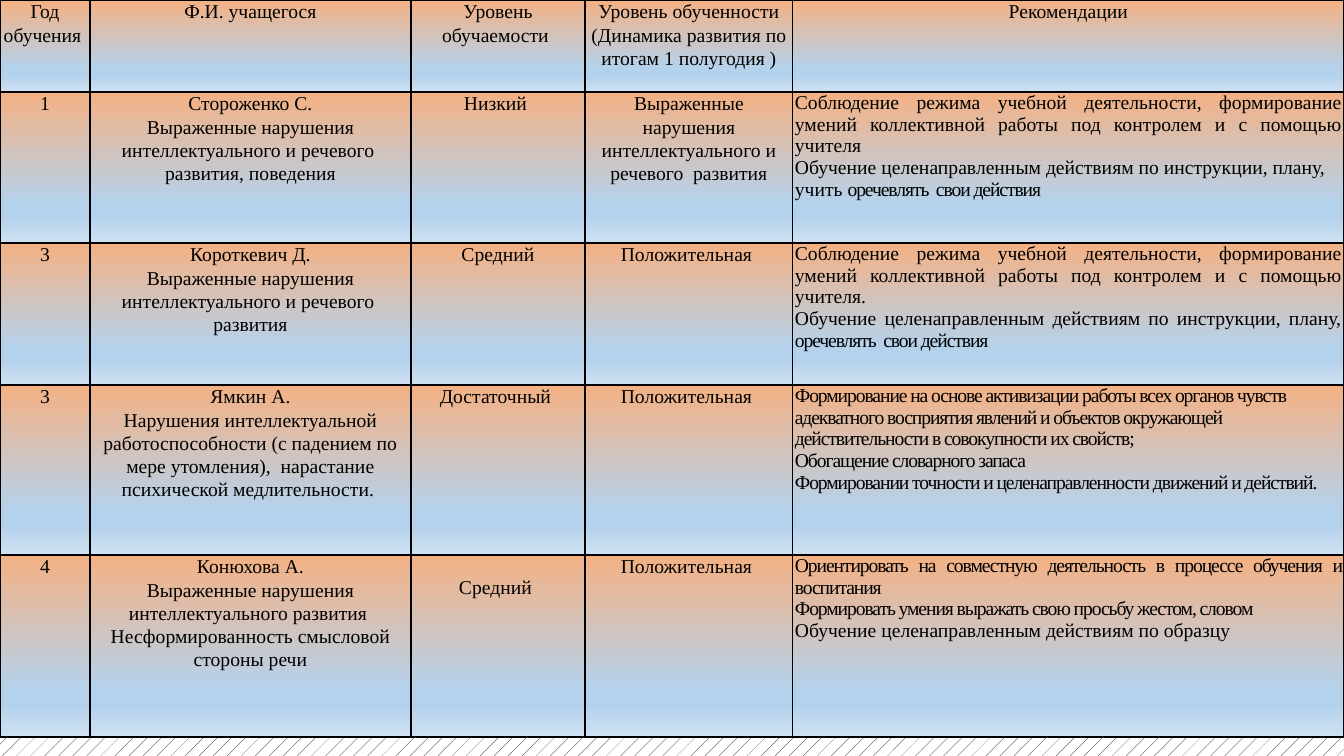
from lxml import etree
from pptx import Presentation
from pptx.dml.color import RGBColor
from pptx.enum.dml import MSO_PATTERN
from pptx.enum.text import PP_ALIGN
from pptx.oxml.ns import qn
from pptx.util import Pt

CENTER, JUSTIFY, LEFT = PP_ALIGN.CENTER, PP_ALIGN.JUSTIFY, PP_ALIGN.LEFT
SCALE = 914400 / 100.8
SLIDE_SIZE = (1344, 756)
COLUMN_WIDTHS = [90, 321, 174, 208, 551]
ROW_HEIGHTS = [92, 151, 142, 170, 182]
SIDE_MARGIN = 2
LOWERED_CELL, LOWERED_MARGIN = (4, 2), 21
FONT, FONT_SIZE, TEXT_COLOR = "Times New Roman", 14, "000000"
CENTERED_SPACING = 1.07
TIGHT, NORMAL = -80, 0
GRADIENT = [(0, "F4B183"), (74, "B5D2EC"), (83, "B5D2EC"), (100, "CEE1F2")]
BORDER_COLOR, BORDER_WIDTH = "000000", 1

HEADER = [
    ["Год обучения "],
    ["Ф.И. учащегося"],
    ["Уровень обучаемости "],
    ["Уровень обученности", "(Динамика развития по итогам 1 полугодия )"],
    ["Рекомендации"],
]
PUPILS = [
    [["1"],
     ["Стороженко С.", "Выраженные нарушения интеллектуального и речевого  развития, поведения"],
     ["Низкий "],
     ["Выраженные нарушения интеллектуального и речевого  развития"]],
    [["3"],
     ["Короткевич Д.", "Выраженные нарушения интеллектуального и речевого  развития"],
     ["Средний"],
     ["Положительная "]],
    [["3"],
     ["Ямкин А.",
      "Нарушения интеллектуальной работоспособности (с падением по мере утомления),  "
      "нарастание психической медлительности. "],
     ["Достаточный "],
     ["Положительная "]],
    [["4"],
     ["Конюхова А.", "Выраженные нарушения интеллектуального развития ",
      "Несформированность смысловой стороны речи"],
     ["Средний "],
     ["Положительная "]],
]
RECOMMENDATIONS = [
    [(JUSTIFY, [("Соблюдение режима учебной деятельности, формирование умений коллективной работы "
                 "под контролем и с помощью учителя", NORMAL)]),
     (LEFT, [("Обучение целенаправленным действиям по инструкции, плану, учить ", NORMAL),
             ("оречевлять  свои действия", TIGHT)])],
    [(JUSTIFY, [("Соблюдение режима учебной деятельности, формирование умений коллективной работы "
                 "под контролем и с помощью учителя.", NORMAL)]),
     (JUSTIFY, [("Обучение целенаправленным действиям по инструкции, плану, ", NORMAL),
                ("оречевлять  свои действия", TIGHT)])],
    [(LEFT, [("Формирование на основе активизации работы всех органов чувств адекватного восприятия "
              "явлений и объектов окружающей действительности в совокупности их свойств;", TIGHT)]),
     (LEFT, [("Обогащение словарного запаса", TIGHT)]),
     (LEFT, [("Формировании точности и целенаправленности движений и действий.", TIGHT)])],
    [(JUSTIFY, [("Ориентировать на совместную деятельность в процессе обучения и воспитания", TIGHT)]),
     (JUSTIFY, [("Формировать умения выражать свою просьбу жестом, словом", TIGHT)]),
     (LEFT, [("Обучение целенаправленным действиям по образцу", NORMAL)])],
]


def px(length):
    return round(length * SCALE)


def rgb(color):
    return RGBColor.from_string(color)


def add_color(parent, color):
    etree.SubElement(parent, qn("a:srgbClr"), val=color)


def write_paragraph(paragraph, runs, align=CENTER, spacing=None):
    paragraph.alignment = align
    if spacing:
        paragraph.line_spacing = spacing
    for text, tracking in runs:
        run = paragraph.add_run()
        run.text = text
        run.font.name = FONT
        run.font.size = Pt(FONT_SIZE)
        run.font.color.rgb = rgb(TEXT_COLOR)
        if tracking:
            run.font._element.set("spc", str(tracking))


def write_cell(cell, paragraphs, spacing=None):
    frame = cell.text_frame
    for index, (align, runs) in enumerate(paragraphs):
        paragraph = frame.add_paragraph() if index else frame.paragraphs[0]
        write_paragraph(paragraph, runs, align=align, spacing=spacing)


def style_cell(cell, top_margin=0):
    cell.margin_left = cell.margin_right = px(SIDE_MARGIN)
    cell.margin_top, cell.margin_bottom = px(top_margin), 0
    properties = cell._tc.get_or_add_tcPr()
    for side in ("lnL", "lnR", "lnT", "lnB"):
        border = etree.SubElement(properties, qn("a:" + side), w=str(Pt(BORDER_WIDTH)))
        add_color(etree.SubElement(border, qn("a:solidFill")), BORDER_COLOR)
    gradient = etree.SubElement(properties, qn("a:gradFill"), rotWithShape="1")
    stops = etree.SubElement(gradient, qn("a:gsLst"))
    for position, color in GRADIENT:
        add_color(etree.SubElement(stops, qn("a:gs"), pos=str(position * 1000)), color)
    etree.SubElement(gradient, qn("a:lin"), ang="5400000", scaled="0")


def main():
    presentation = Presentation()
    presentation.slide_width, presentation.slide_height = map(px, SLIDE_SIZE)
    slide = presentation.slides.add_slide(presentation.slide_layouts[6])
    background = slide.background.fill
    background.patterned()
    background.pattern = MSO_PATTERN.PERCENT_5
    background.fore_color.rgb = rgb("000000")
    background.back_color.rgb = rgb("FFFFFF")

    table = slide.shapes.add_table(
        len(ROW_HEIGHTS), len(COLUMN_WIDTHS), 0, 0,
        px(sum(COLUMN_WIDTHS)), px(sum(ROW_HEIGHTS))).table
    table.first_row = table.horz_banding = False
    for column, width in zip(table.columns, COLUMN_WIDTHS):
        column.width = px(width)
    for row, height in zip(table.rows, ROW_HEIGHTS):
        row.height = px(height)

    for row, entries in enumerate([HEADER] + PUPILS):
        for column, lines in enumerate(entries):
            centered = [(CENTER, [(line, NORMAL)]) for line in lines]
            write_cell(table.cell(row, column), centered, spacing=CENTERED_SPACING)
    for row, advice in enumerate(RECOMMENDATIONS, start=1):
        write_cell(table.cell(row, len(COLUMN_WIDTHS) - 1), advice)

    for row in range(len(ROW_HEIGHTS)):
        for column in range(len(COLUMN_WIDTHS)):
            lowered = (row, column) == LOWERED_CELL
            style_cell(table.cell(row, column), top_margin=LOWERED_MARGIN if lowered else 0)

    presentation.save("out.pptx")


if __name__ == "__main__":
    main()
